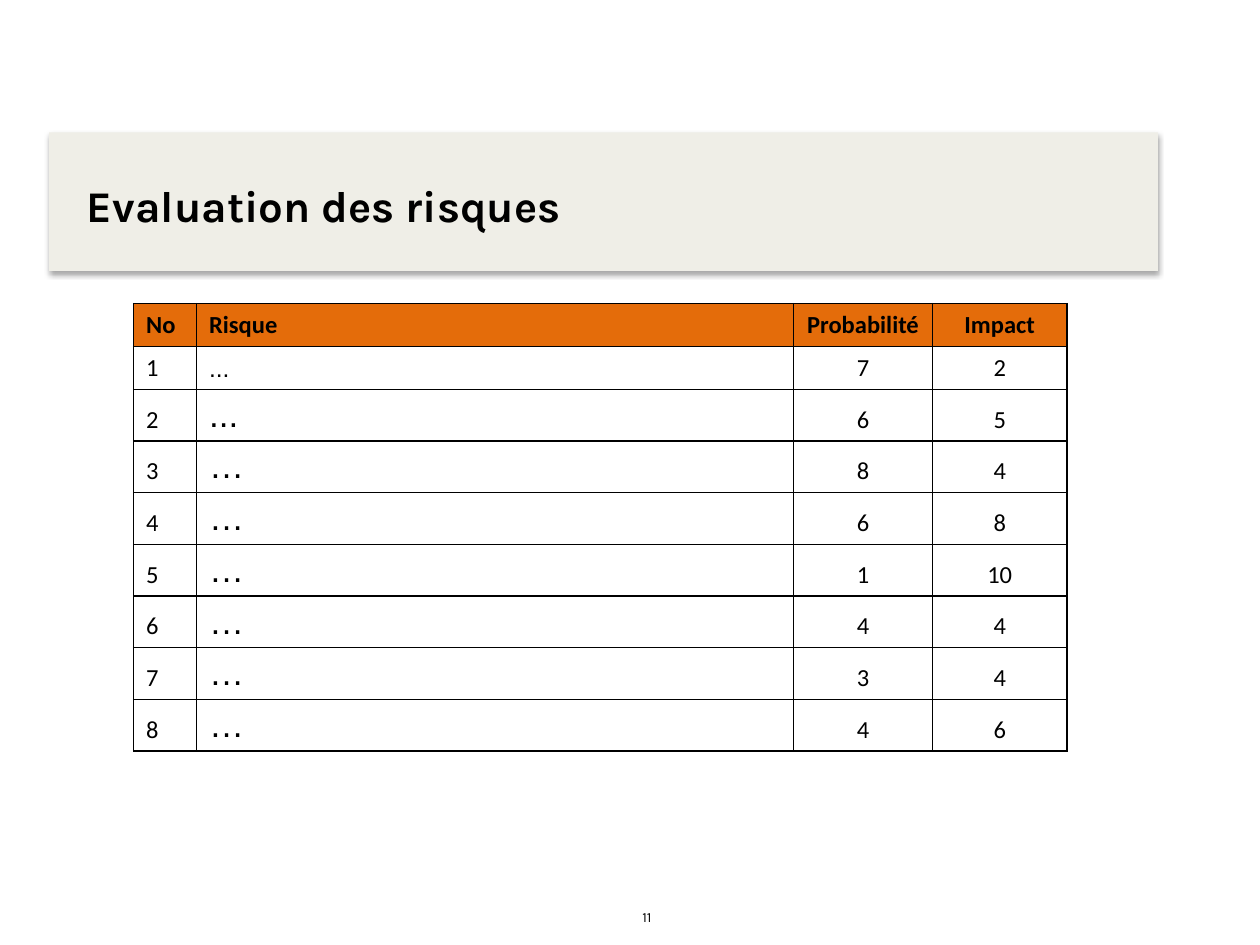
from lxml.etree import SubElement
from pptx import Presentation
from pptx.dml.color import RGBColor as RGB
from pptx.enum.shapes import MSO_SHAPE as Shape
from pptx.enum.text import MSO_ANCHOR as Anchor, PP_ALIGN as Align
from pptx.oxml import parse_xml
from pptx.oxml.ns import nsdecls, qn
from pptx.util import Inches, Pt

COLORS = {"ink": "000000", "band": "EFEEE7", "head": "E46C0A", "cell": "FFFFFF"}
TITLE = "Evaluation des risques"
PAGE = "11"
HEADS = ("No", "Risque", "Probabilité", "Impact")
# Risk label, probability, impact
RISKS = [
    ("...", 7, 2), ("...", 6, 5), ("…", 8, 4), ("…", 6, 8),
    ("…", 1, 10), ("…", 4, 4), ("…", 3, 4), ("…", 4, 6),
]
COLS = (0.5, 4.74, 1.1, 1.07)
LOW, HIGH = 0.34, 0.41
LEFT, TOP = 1.06, 2.41


def color(name):
    return RGB.from_string(COLORS[name])


def style(para, size, face="Calibri", bold=False, align=Align.LEFT):
    para.alignment = align
    for run in para.runs:
        font = run.font
        font.size, font.name, font.bold = Pt(size), face, bold
        font.color.rgb = color("ink")


def box(*sides):
    return [Inches(side) for side in sides]


def place(shape, *sides):
    shape.left, shape.top, shape.width, shape.height = box(*sides)


def outline(cell):
    """Draw a thin line on all four sides; call before the fill is set."""
    props = cell._tc.get_or_add_tcPr()
    for side in ("lnL", "lnR", "lnT", "lnB"):
        line = SubElement(props, qn(f"a:{side}"), w=str(Pt(1)))
        fill = SubElement(line, qn("a:solidFill"))
        SubElement(fill, qn("a:srgbClr"), val=COLORS["ink"])


def add_band(slide):
    band = slide.shapes.add_shape(Shape.RECTANGLE, *box(0.39, 1.05, 8.8, 1.1))
    band.fill.solid()
    band.fill.fore_color.rgb = color("band")
    band.line.fill.background()
    band.shadow.inherit = False
    effects = band._element.spPr.find(qn("a:effectLst"))
    effects.append(parse_xml(
        f'<a:outerShdw {nsdecls("a")} blurRad="{Pt(3.1)}" dist="{Pt(1.8)}" '
        f'dir="5400000" rotWithShape="0"><a:srgbClr val="{COLORS["ink"]}">'
        '<a:alpha val="35000"/></a:srgbClr></a:outerShdw>'))
    slide.shapes._spTree.insert(2, band._element)  # behind the title


def add_title(slide):
    title = slide.shapes.title
    place(title, 0.59, 1.23, 8.43, 0.79)
    frame = title.text_frame
    frame.text = TITLE
    frame.vertical_anchor = Anchor.MIDDLE
    style(frame.paragraphs[0], 25, "Karla", True)


def add_risks(slide):
    rows = [HEADS] + [(no, *risk) for no, risk in enumerate(RISKS, 1)]
    highs = [LOW] * 2 + [HIGH] * (len(rows) - 2)
    table = slide.shapes.add_table(
        len(rows), len(COLS), *box(LEFT, TOP, sum(COLS), sum(highs))).table
    for col, width in zip(table.columns, COLS):
        col.width = Inches(width)
    for r, (values, high) in enumerate(zip(rows, highs)):
        table.rows[r].height = Inches(high)
        for c, value in enumerate(values):
            cell = table.cell(r, c)
            outline(cell)
            cell.fill.solid()
            cell.fill.fore_color.rgb = color("cell" if r else "head")
            cell.vertical_anchor = Anchor.BOTTOM
            cell.text_frame.text = str(value)
            label = r > 0 and c == 1
            style(cell.text_frame.paragraphs[0],
                  20 if label and r > 1 else 14,
                  "Arial" if label else "Calibri",
                  r == 0, Align.CENTER if c > 1 else Align.LEFT)


def add_page(slide):
    frame = slide.shapes.add_textbox(*box(5, 7.16, 3.27, 0.24)).text_frame
    frame.word_wrap = True
    frame.text = PAGE
    style(frame.paragraphs[0], 8, "Karla")


def main():
    deck = Presentation()
    deck.slide_width, deck.slide_height = box(10, 7.5)
    slide = deck.slides.add_slide(deck.slide_layouts[5])
    for add in (add_band, add_title, add_risks, add_page):
        add(slide)
    deck.save("out.pptx")


if __name__ == "__main__":
    main()
